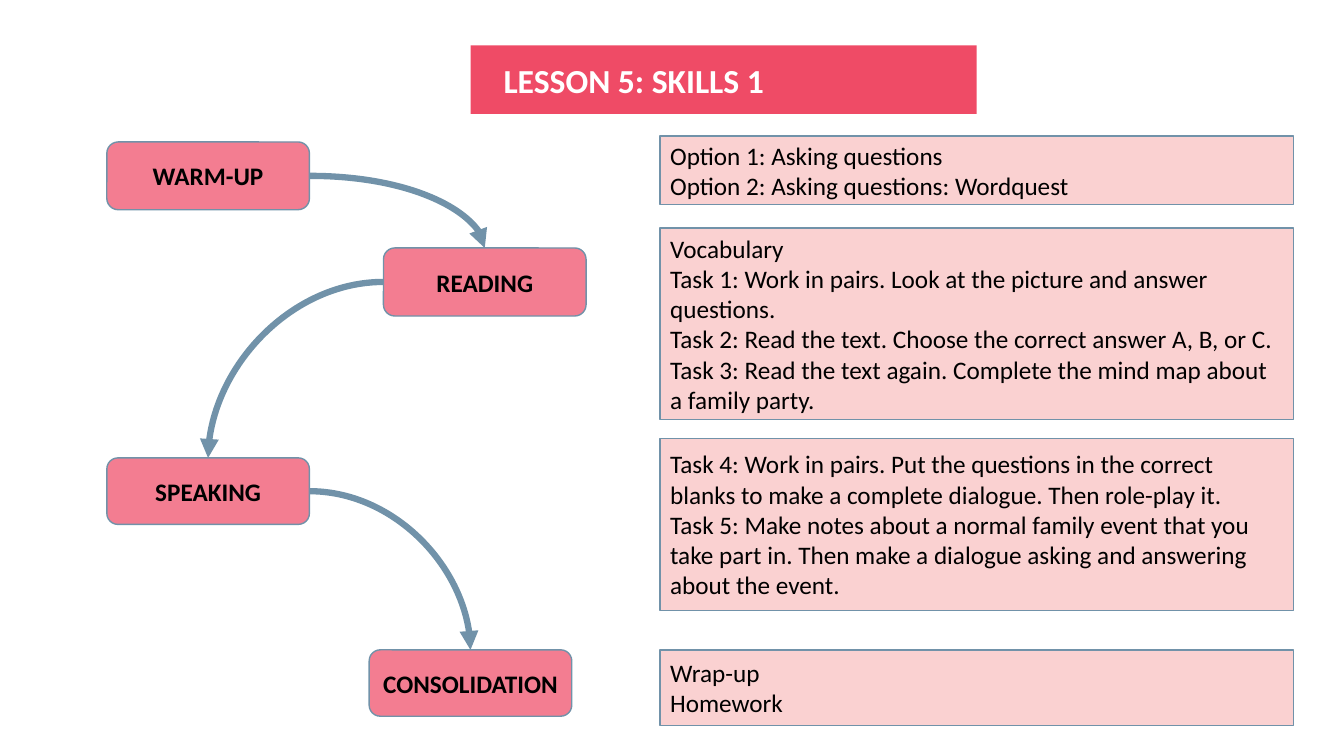
from lxml.etree import SubElement
from pptx import Presentation
from pptx.dml.color import RGBColor
from pptx.enum.shapes import MSO_CONNECTOR as Connector, MSO_SHAPE as Shape
from pptx.enum.text import MSO_ANCHOR as Anchor, PP_ALIGN as Align
from pptx.oxml.ns import qn
from pptx.util import Pt

TITLE = "LESSON 5: SKILLS 1"
TITLE_AREA = (336.2, 32.4, 361.4, 49)
FONT = "Calibri"
ROSE, PINK, BLUSH, STEEL = "EF4B66", "F37D91", "F7A5A5", "7192A9"
BLACK, WHITE = "000000", "FFFFFF"

STEP_WIDTH = 144.7
STEPS = [
    ("WARM-UP", 76.3, 101.4, 48.4),
    ("READING", 273.9, 177.1, 48.6),
    ("SPEAKING", 76.3, 327.1, 47.5),
    ("CONSOLIDATION", 263.7, 464.2, 47.4),
]

DETAIL_LEFT, DETAIL_WIDTH = 471.6, 452.4
DETAILS = [
    (97.2, 48.8, [
        "Option 1: Asking questions",
        "Option 2: Asking questions: Wordquest",
    ]),
    (162.8, 136.8, [
        "Vocabulary",
        "Task 1: Work in pairs. Look at the picture and answer questions.",
        "Task 2: Read the text. Choose the correct answer A, B, or C.",
        "Task 3: Read the text again. Complete the mind map about a family party.",
    ]),
    (313, 123, [
        "Task 4: Work in pairs. Put the questions in the correct blanks to make "
        "a complete dialogue. Then role-play it.",
        "Task 5: Make notes about a normal family event that you take part in. "
        "Then make a dialogue asking and answering about the event.",
    ]),
    (464.2, 54, ["Wrap-up", "Homework"]),
]


def color(value):
    return RGBColor.from_string(value)


def write(box, lines, size, ink, bold, align):
    frame = box.text_frame
    frame.word_wrap = True
    frame.vertical_anchor = Anchor.MIDDLE
    for index, line in enumerate(lines):
        para = frame.add_paragraph() if index else frame.paragraphs[0]
        para.alignment = align
        span = para.add_run()
        span.text = line
        span.font.name = FONT
        span.font.size = Pt(size)
        span.font.bold = bold
        span.font.color.rgb = color(ink)


def paint(box, fill):
    box.fill.solid()
    box.fill.fore_color.rgb = color(fill)


def add_panel(page, kind, area, fill):
    box = page.shapes.add_shape(kind, *map(Pt, area))
    box.shadow.inherit = False
    paint(box, fill)
    box.line.color.rgb = color(STEEL)
    box.line.width = Pt(1)
    return box


def add_title(page):
    title = page.shapes.title
    title.left, title.top, title.width, title.height = map(Pt, TITLE_AREA)
    outline = SubElement(title.element.spPr, qn("a:prstGeom"), prst="roundRect")
    guides = SubElement(outline, qn("a:avLst"))
    SubElement(guides, qn("a:gd"), name="adj", fmla="val 42700")
    paint(title, ROSE)
    write(title, [TITLE], 24, WHITE, True, Align.LEFT)
    title.text_frame.margin_left = Pt(23.5)


def add_step(page, label, left, top, height):
    area = (left, top, STEP_WIDTH, height)
    box = add_panel(page, Shape.ROUNDED_RECTANGLE, area, PINK)
    write(box, [label], 18, BLACK, True, Align.CENTER)
    return box


def add_detail(page, top, height, lines):
    area = (DETAIL_LEFT, top, DETAIL_WIDTH, height)
    box = add_panel(page, Shape.RECTANGLE, area, BLUSH)
    tint = box.element.spPr.find(qn("a:solidFill"))[0]
    SubElement(tint, qn("a:alpha"), val="50000")
    write(box, lines, 18, BLACK, False, Align.LEFT)


def add_arrow(page, source, target):
    rightward = source.left < target.left
    start_x = source.left + (source.width if rightward else 0)
    start_y = source.top + source.height // 2
    end_x = target.left + target.width // 2
    arrow = page.shapes.add_connector(
        Connector.CURVE, start_x, start_y, end_x, target.top)
    arrow.begin_connect(source, 3 if rightward else 1)
    arrow.end_connect(target, 0)
    arrow.line.color.rgb = color(STEEL)
    arrow.line.width = Pt(4.5)
    props = arrow.element.spPr
    props.find(qn("a:prstGeom")).set("prst", "curvedConnector2")
    SubElement(props.find(qn("a:ln")), qn("a:tailEnd"), type="triangle")
    SubElement(props, qn("a:effectLst"))


def main():
    deck = Presentation()
    deck.slide_width, deck.slide_height = Pt(960), Pt(540)
    page = deck.slides.add_slide(deck.slide_layouts[5])
    add_title(page)
    for detail in DETAILS:
        add_detail(page, *detail)
    boxes = [add_step(page, *step) for step in STEPS]
    for source, target in zip(boxes, boxes[1:]):
        add_arrow(page, source, target)
    deck.save("out.pptx")


if __name__ == "__main__":
    main()
